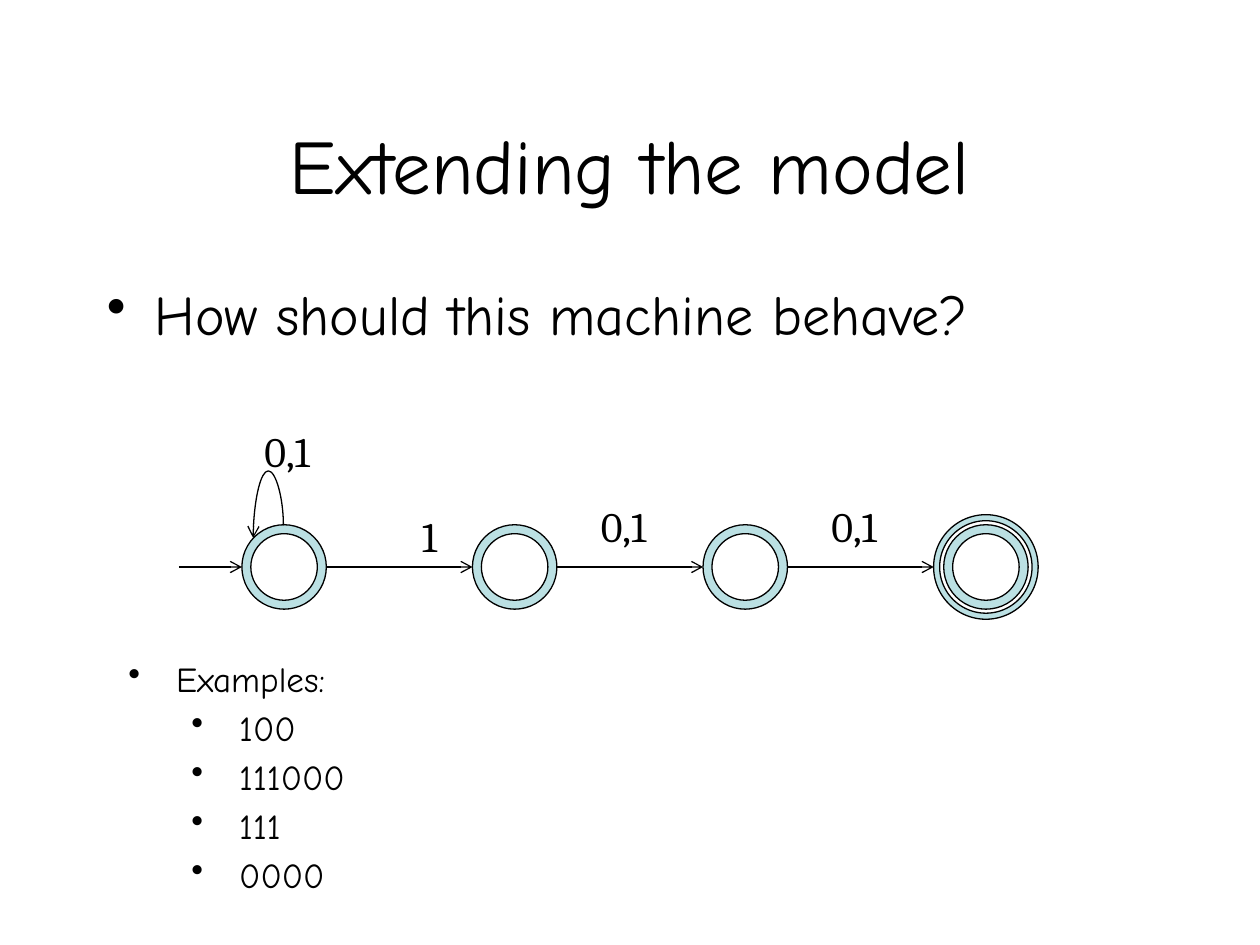
from dataclasses import dataclass

from lxml.etree import SubElement
from pptx import Presentation
from pptx.dml.color import RGBColor
from pptx.enum.shapes import MSO_CONNECTOR, MSO_SHAPE
from pptx.enum.text import MSO_ANCHOR, PP_ALIGN
from pptx.oxml.ns import qn
from pptx.util import Inches, Pt


@dataclass(frozen=True)
class Theme:
    """Colours, fonts and type sizes of the slide."""
    ink: RGBColor = RGBColor(0x00, 0x00, 0x00)
    ring: RGBColor = RGBColor(0xBB, 0xE0, 0xE3)
    text_font: str = "Comic Neue"
    label_font: str = "Cambria"
    title_size: int = 44
    body_size: int = 32
    label_size: int = 24
    example_size: int = 20
    line_width: float = 0.75


THEME = Theme()
AXIS = 4.5
STATE_SIZE = 0.67
ACCEPT_SIZE = 0.83
FIRST_STATE = 1.92
STATE_PITCH = 1.83


def add_box(slide, left, top, width, height):
    """Add a wrapping text box and return its text frame."""
    box = slide.shapes.add_textbox(Inches(left), Inches(top), Inches(width), Inches(height))
    box.text_frame.word_wrap = True
    return box.text_frame


def add_span(para, text, font, size):
    """Add one styled run to a paragraph."""
    span = para.add_run()
    span.text = text
    span.font.name = font
    span.font.size = Pt(size)
    span.font.color.rgb = THEME.ink


def add_title(slide, text):
    """Add the centred slide title."""
    frame = add_box(slide, 0.75, 0.67, 8.5, 1.25)
    frame.vertical_anchor = MSO_ANCHOR.MIDDLE
    para = frame.paragraphs[0]
    para.alignment = PP_ALIGN.CENTER
    add_span(para, text, THEME.text_font, THEME.title_size)


def add_bullets(slide, place, items, size):
    """Add a bulleted list of (level, text) items."""
    frame = add_box(slide, *place)
    for index, (level, text) in enumerate(items):
        para = frame.add_paragraph() if index else frame.paragraphs[0]
        para.level = level
        properties = para._p.get_or_add_pPr()
        properties.set("marL", str(Inches(0.38 + 0.5 * level)))
        properties.set("indent", str(Inches(-0.38)))
        spacing = SubElement(properties, qn("a:spcBef"))
        SubElement(spacing, qn("a:spcPct")).set("val", "20000")
        SubElement(properties, qn("a:buChar")).set("char", "•")
        add_span(para, text, THEME.text_font, size)


def add_ring(slide, center, size, thickness):
    """Add a state ring centred on the axis."""
    ring = slide.shapes.add_shape(
        MSO_SHAPE.DONUT, Inches(center - size / 2), Inches(AXIS - size / 2), Inches(size), Inches(size)
    )
    ring.adjustments[0] = thickness
    ring.shadow.inherit = False
    ring.fill.solid()
    ring.fill.fore_color.rgb = THEME.ring
    ring.line.color.rgb = THEME.ink
    ring.line.width = Pt(THEME.line_width)


def add_arrow(slide, kind, start, end):
    """Add a connector with an open arrowhead at its end."""
    arrow = slide.shapes.add_connector(kind, *map(Inches, start + end))
    arrow.line.color.rgb = THEME.ink
    arrow.line.width = Pt(THEME.line_width)
    SubElement(arrow.line._get_or_add_ln(), qn("a:tailEnd")).set("type", "arrow")
    SubElement(arrow._element.spPr, qn("a:effectLst"))
    return arrow


def add_self_loop(slide):
    """Add the curved arrow from the first state back to itself."""
    loop = add_arrow(slide, MSO_CONNECTOR.CURVE, (2.18, 4.34), (2.08, 4.1))
    properties = loop._element.spPr
    properties.find(qn("a:xfrm")).set("rot", "16200000")
    guides = properties.find(qn("a:prstGeom")).get_or_add_avLst()
    guide = SubElement(guides, qn("a:gd"))
    guide.set("name", "adj1")
    guide.set("fmla", "val -432700")


def add_label(slide, text, left, top, width=0.67, height=0.5):
    """Add the input symbols of a transition."""
    frame = add_box(slide, left, top, width, height)
    add_span(frame.paragraphs[0], text, THEME.label_font, THEME.label_size)


def add_machine(slide):
    """Draw the states, transitions and labels of the automaton."""
    lefts = [FIRST_STATE + STATE_PITCH * index for index in range(4)]
    for left in lefts[:3]:
        add_ring(slide, left + STATE_SIZE / 2, STATE_SIZE, 0.106)
    accept_center = lefts[3] + ACCEPT_SIZE / 2
    add_ring(slide, accept_center, STATE_SIZE, 0.106)
    add_ring(slide, accept_center, ACCEPT_SIZE, 0.058)

    starts = [FIRST_STATE - 0.5] + [left + STATE_SIZE for left in lefts[:3]]
    for start, end in zip(starts, lefts):
        add_arrow(slide, MSO_CONNECTOR.STRAIGHT, (start, AXIS), (end, AXIS))
    add_self_loop(slide)

    add_label(slide, "0,1", 2, 3.33)
    add_label(slide, "1", 3.25, 4, 0.33, 0.91)
    for left in (4.67, 6.5):
        add_label(slide, "0,1", left, 3.92)


def main():
    """Build and save the slide."""
    deck = Presentation()
    deck.slide_width, deck.slide_height = Inches(10), Inches(7.5)
    page = deck.slides.add_slide(deck.slide_layouts[6])
    add_title(page, "Extending the model")
    add_bullets(page, (0.75, 2.17, 8.5, 1.08), [(0, "How should this machine behave?")], THEME.body_size)
    add_machine(page)
    examples = [(0, "Examples:")] + [(1, word) for word in ("100", "111000", "111", "0000")]
    add_bullets(page, (0.92, 5.17, 4.25, 2.17), examples, THEME.example_size)
    deck.save("out.pptx")


if __name__ == "__main__":
    main()
